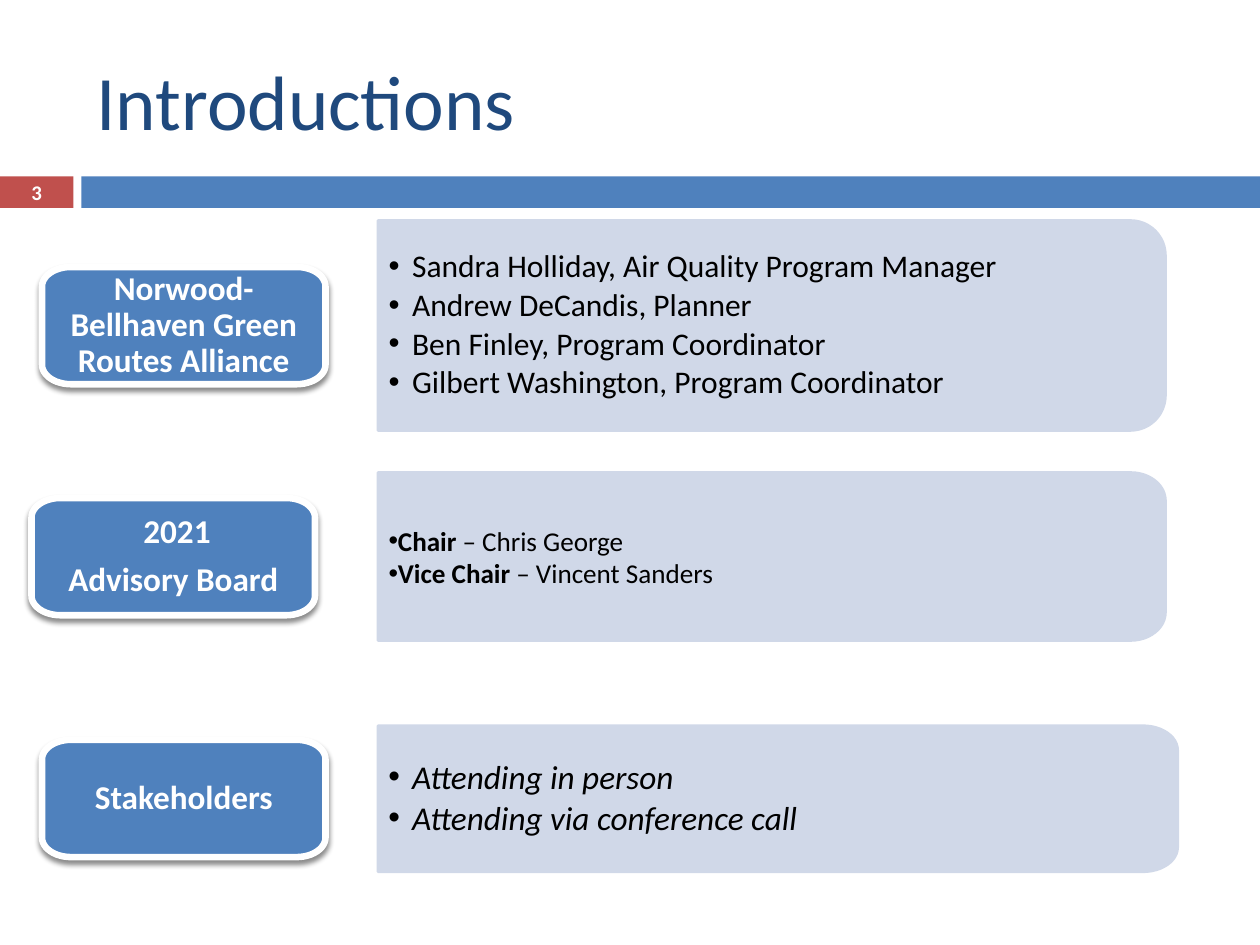
from math import cos, pi, sin

from lxml.etree import SubElement
from pptx import Presentation
from pptx.dml.color import RGBColor
from pptx.enum.shapes import MSO_SHAPE
from pptx.enum.text import MSO_ANCHOR, PP_ALIGN
from pptx.oxml.ns import qn
from pptx.util import Pt

COLORS = {"navy": "1F497D", "blue": "4F81BD", "red": "C0504D",
          "panel": "D0D8E8", "white": "FFFFFF", "black": "000000"}


def rounded_outline(left, top, width, height, radius_x, radius_y, left_round):
    """Draw a box with elliptical corners, on all sides or on the right only."""
    corners = [(left + width - radius_x, top + radius_y, -90),
               (left + width - radius_x, top + height - radius_y, 0)]
    points = []
    if left_round:
        corners += [(left + radius_x, top + height - radius_y, 90),
                    (left + radius_x, top + radius_y, 180)]
    for center_x, center_y, start in corners:
        for step in range(13):
            angle = (start + step * 7.5) * pi / 180
            points.append((center_x + radius_x * cos(angle),
                           center_y + radius_y * sin(angle)))
    if not left_round:
        points += [(left, top + height), (left, top)]
    points = [(Pt(x), Pt(y)) for x, y in points]
    builder = slide.shapes.build_freeform(*points[0])
    builder.add_line_segments(points[1:], close=True)
    shape = builder.convert_to_shape()
    shape.shadow.inherit = False
    return shape


def write_text(shape, paragraphs, size, color, align, insets, spacing, after):
    """Fill a shape with paragraphs, each a list of (text, bold, italic)."""
    frame = shape.text_frame
    frame.word_wrap = True
    frame.vertical_anchor = MSO_ANCHOR.MIDDLE
    frame.margin_left, frame.margin_top, frame.margin_right, frame.margin_bottom = map(Pt, insets)
    for index, spans in enumerate(paragraphs):
        para = frame.add_paragraph() if index else frame.paragraphs[0]
        para.alignment = align
        para.line_spacing = spacing
        para.space_after = Pt(after)
        for text, bold, italic in spans:
            span = para.add_run()
            span.text = text
            span.font.name = "Calibri"
            span.font.size = Pt(size)
            span.font.bold = bold
            span.font.italic = italic
            span.font.color.rgb = RGBColor.from_string(COLORS[color])


deck = Presentation()
deck.slide_width, deck.slide_height = Pt(720), Pt(540)
slide = deck.slides.add_slide(deck.slide_layouts[5])

# Title
title = slide.shapes.title
title.left, title.top, title.width, title.height = Pt(48), Pt(18), Pt(642), Pt(78)
write_text(title, [[("Introductions", False, False)]], 44, "navy",
           PP_ALIGN.LEFT, (7.2, 3.6, 7.2, 3.6), 1.0, 0)

# Bar below the title, with the page number
for left, width, color in [(0, 42, "red"), (46.5, 673.5, "blue")]:
    bar = slide.shapes.add_shape(MSO_SHAPE.RECTANGLE, Pt(left), Pt(100.8), Pt(width), Pt(18))
    bar.shadow.inherit = False
    bar.fill.solid()
    bar.fill.fore_color.rgb = RGBColor.from_string(COLORS[color])
    bar.line.fill.background()
number_box = slide.shapes.add_textbox(Pt(0), Pt(100.4), Pt(42), Pt(19))
write_text(number_box, [[("3", True, False)]], 11.9, "white",
           PP_ALIGN.CENTER, (0, 0, 0, 0), 1.0, 0)

# Panels: top, width, height, text size, line spacing, space after, indent, paragraphs
team = ["Sandra Holliday, Air Quality Program Manager", "Andrew DeCandis, Planner",
        "Ben Finley, Program Coordinator", "Gilbert Washington, Program Coordinator"]
board = [("Chair", " – Chris George"), ("Vice Chair ", "– Vincent Sanders")]
attendance = ["Attending in person", "Attending via conference call"]
panels = [
    (126, 450, 120, 18, 0.9, 2.7, 13.5, [[(text, False, False)] for text in team]),
    (270, 450, 96, 15.5, 1.0, 0, 0,
     [[(role, True, False), (name, False, False)] for role, name in board]),
    (414.7, 457, 83.5, 19, 0.9, 2.85, 13.5, [[(text, False, True)] for text in attendance]),
]
for top, width, height, size, spacing, after, indent, paragraphs in panels:
    panel = rounded_outline(216, top, width, height, 20, height / 6, False)
    panel.fill.solid()
    panel.fill.fore_color.rgb = RGBColor.from_string(COLORS["panel"])
    panel.line.color.rgb = RGBColor.from_string(COLORS["panel"])
    panel.line.width = Pt(1.5)
    write_text(panel, paragraphs, size, "black", PP_ALIGN.LEFT,
               (6, 7.2, 10, 7.2), spacing, after)
    for para in panel.text_frame.paragraphs:
        properties = para._p.get_or_add_pPr()
        properties.set("marL", str(Pt(indent)))
        properties.set("indent", str(-Pt(indent)))
        SubElement(properties, qn("a:buFont"), typeface="Arial")
        SubElement(properties, qn("a:buChar"), char="•")

# Group cards: left, top, lines
cards = [(24, 152.6, ["Norwood-Bellhaven Green Routes Alliance"]),
         (18, 284.6, [" 2021", "Advisory Board"]),
         (24, 422.8, ["Stakeholders"])]
for left, top, lines in cards:
    card = rounded_outline(left, top, 162, 67, 16.5, 11.2, True)
    card.fill.solid()
    card.fill.fore_color.rgb = RGBColor.from_string(COLORS["blue"])
    card.line.color.rgb = RGBColor.from_string(COLORS["white"])
    card.line.width = Pt(3.75)
    effects = card._element.spPr.find(qn("a:effectLst"))
    shadow = SubElement(effects, qn("a:outerShdw"), blurRad=str(Pt(3)), dist=str(Pt(2.4)),
                        dir="5400000", rotWithShape="0")
    shade = SubElement(shadow, qn("a:srgbClr"), val=COLORS["black"])
    SubElement(shade, qn("a:alpha"), val="45000")
    write_text(card, [[(line, True, False)] for line in lines], 19, "white",
               PP_ALIGN.CENTER, (10.8, 7.9, 10.8, 7.9), 0.9, 6.65)

deck.save("out.pptx")
